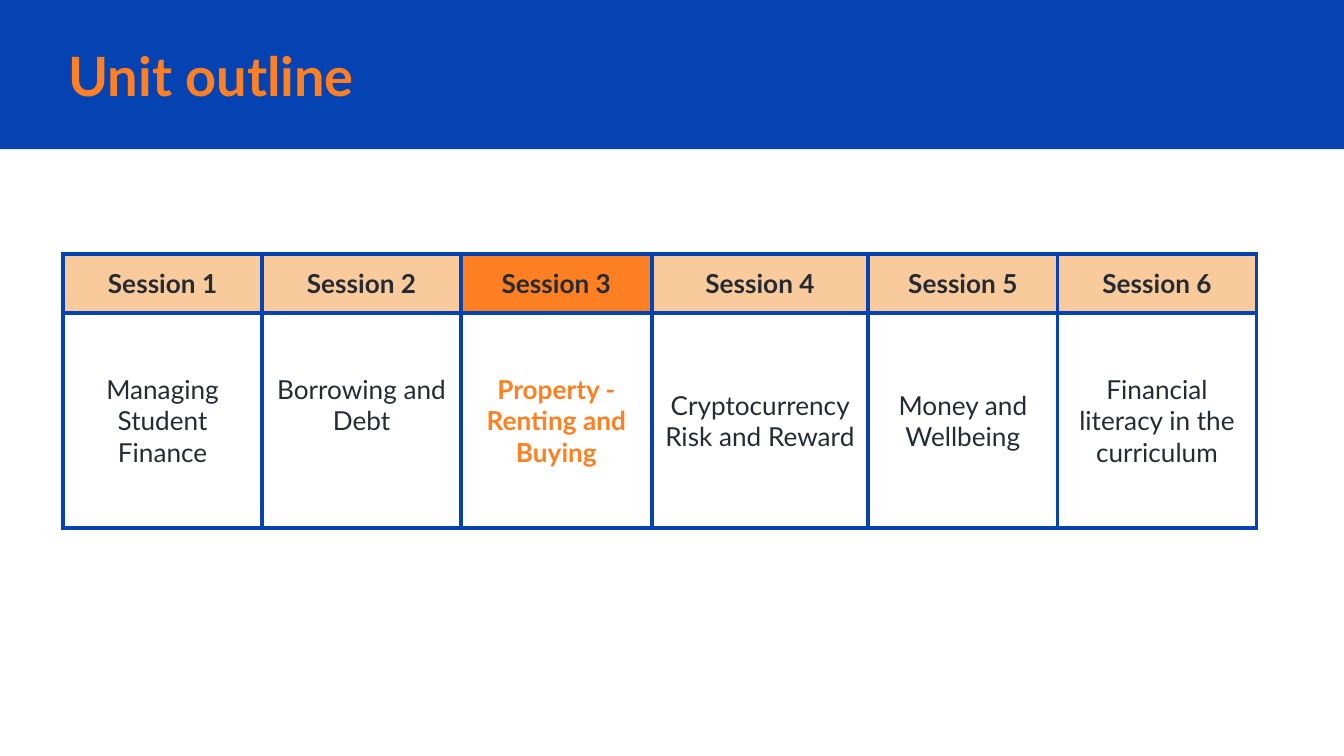
from pptx import Presentation
from pptx.dml.color import RGBColor
from pptx.enum import shapes, text
from pptx.oxml import parse_xml
from pptx.oxml.ns import nsdecls
from pptx.util import Inches, Pt

COLORS = {"blue": "0543B3", "orange": "FF8022", "peach": "F9CB9C",
          "ink": "262A33", "white": "FFFFFF"}


def write(frame, words, size=14, color="ink", bold=False, align=text.PP_ALIGN.CENTER):
    frame.word_wrap = True
    paragraph = frame.paragraphs[0]
    paragraph.alignment = align
    run = paragraph.add_run()
    run.text = words
    run.font.name = "Lato"
    run.font.size = Pt(size)
    run.font.bold = bold
    run.font.color.rgb = RGBColor.from_string(COLORS[color])


def style_cell(cell, fill):
    cell.fill.solid()
    cell.fill.fore_color.rgb = RGBColor.from_string(COLORS[fill])
    cell.vertical_anchor = text.MSO_ANCHOR.MIDDLE
    cell.margin_left = cell.margin_right = Inches(0.1)
    cell.margin_top = cell.margin_bottom = Inches(0.1)
    # Borders come before the fill in the cell properties
    for position, side in enumerate(("lnL", "lnR", "lnT", "lnB")):
        border = parse_xml(
            f'<a:{side} {nsdecls("a")} w="{Pt(2.25)}"><a:solidFill>'
            f'<a:srgbClr val="{COLORS["blue"]}"/></a:solidFill></a:{side}>')
        cell._tc.get_or_add_tcPr().insert(position, border)


# Widescreen slide, 16 to 9
prs = Presentation()
prs.slide_width = Inches(10)
prs.slide_height = Inches(10 * 9 / 16)
slide = prs.slides.add_slide(prs.slide_layouts[5])

# Header band, placed behind the title
band = slide.shapes.add_shape(shapes.MSO_SHAPE.RECTANGLE, 0, 0, prs.slide_width, Inches(1.11))
band.shadow.inherit = False
band.fill.solid()
band.fill.fore_color.rgb = RGBColor.from_string(COLORS["blue"])
band.line.fill.background()
slide.shapes._spTree.insert(2, band._element)

# Title
title = slide.shapes.title
title.left, title.top = Inches(0.41), Inches(0.28)
title.width, title.height = Inches(8.46), Inches(0.56)
heading = title.text_frame
heading.auto_size = text.MSO_AUTO_SIZE.NONE
heading.vertical_anchor = text.MSO_ANCHOR.MIDDLE
heading.margin_left = heading.margin_right = Inches(0.1)
heading.margin_top = heading.margin_bottom = Inches(0.1)
write(heading, "Unit outline", size=29, color="orange", bold=True, align=text.PP_ALIGN.LEFT)

# Session table, with the current session highlighted
topics = ["Managing Student Finance", "Borrowing and Debt", "Property - Renting and Buying",
          "Cryptocurrency Risk and Reward", "Money and Wellbeing",
          "Financial literacy in the curriculum"]
column_widths = [1.48, 1.48, 1.42, 1.61, 1.41, 1.48]
row_heights = [0.44, 1.6]
current_session = 3

outline = slide.shapes.add_table(2, len(topics), Inches(0.47), Inches(1.89),
                                 Inches(sum(column_widths)), Inches(sum(row_heights))).table
outline.horz_banding = False
for row, height in zip(outline.rows, row_heights):
    row.height = Inches(height)

for column, (topic, width) in enumerate(zip(topics, column_widths)):
    outline.columns[column].width = Inches(width)
    session = column + 1
    current = session == current_session
    session_cell, topic_cell = outline.cell(0, column), outline.cell(1, column)
    style_cell(session_cell, "orange" if current else "peach")
    write(session_cell.text_frame, f"Session {session}", bold=True)
    style_cell(topic_cell, "white")
    write(topic_cell.text_frame, topic, color="orange" if current else "ink", bold=current)

# The second topic sits half a line above the middle
outline.cell(1, 1).margin_bottom = Inches(0.33)

prs.save("out.pptx")
